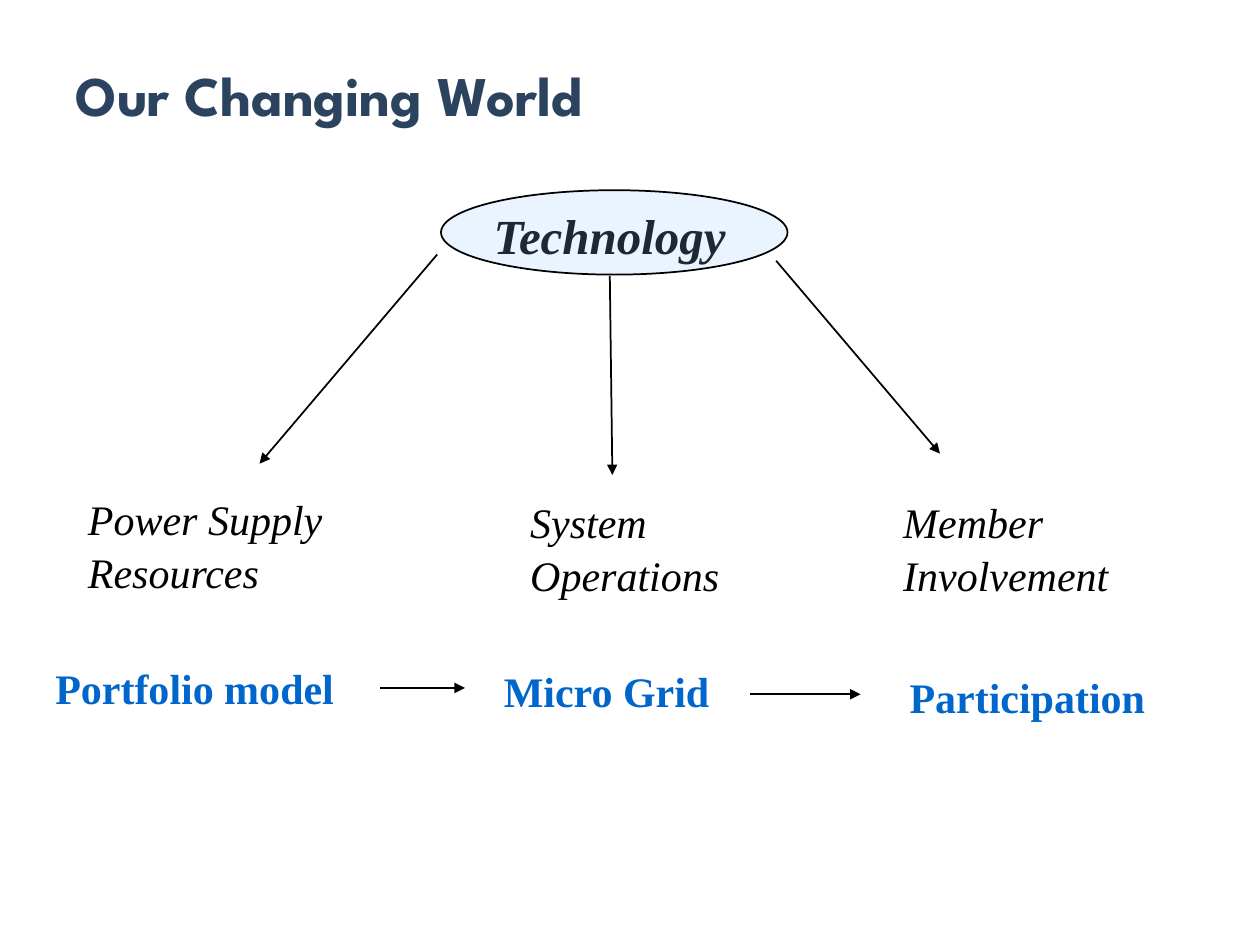
from lxml import etree
from pptx import Presentation
from pptx.dml.color import RGBColor
from pptx.enum.shapes import MSO_CONNECTOR, MSO_SHAPE
from pptx.enum.text import MSO_ANCHOR, PP_ALIGN
from pptx.oxml.ns import qn
from pptx.util import Inches, Pt

STRAIGHT = MSO_CONNECTOR.STRAIGHT
OVAL = MSO_SHAPE.OVAL
MIDDLE = MSO_ANCHOR.MIDDLE
LEFT = PP_ALIGN.LEFT

BLACK = RGBColor(0x00, 0x00, 0x00)
NAVY = RGBColor(0x2C, 0x43, 0x60)
BLUE = RGBColor(0x00, 0x66, 0xCC)
SKY = RGBColor(0x99, 0xCC, 0xFF)

TITLE_FONT = "League Spartan"
BODY_FONT = "Times New Roman"
LINE_SPACING = 1.05

TITLE = "Our Changing World"
TITLE_AREA = (0.5, 0.33, 8.75, 0.83)
HUB = "Technology"
HUB_AREA = (3.82, 1.56, 2.67, 0.57)
HUB_OVAL_AREA = (3.5, 1.51, 2.75, 0.67)

AREAS = [
    ("Power Supply Resources", (0.6, 3.85, 2.17, 0.91)),
    ("System Operations", (4.11, 3.87, 1.79, 0.91)),
    ("Member Involvement", (7.07, 3.87, 1.92, 0.91)),
]
OUTCOMES = [
    ("Portfolio model", (0.34, 5.19, 2.68, 0.51)),
    ("Micro Grid", (3.9, 5.21, 1.95, 0.51)),
    ("Participation", (7.12, 5.26, 2.29, 0.51)),
]
HUB_ARROWS = [
    ((3.47, 2.02), (2.06, 3.68)),
    ((4.84, 2.19), (4.86, 3.77)),
    ((6.16, 2.07), (7.46, 3.6)),
]
OUTCOME_ARROWS = [
    ((3.02, 5.46), (3.69, 5.46)),
    ((5.95, 5.51), (6.83, 5.51)),
]


def inches(lengths):
    return [Inches(length) for length in lengths]


def add_span(para, text, font_name, size, color, bold=False, italic=False):
    span = para.add_run()
    span.text = text
    font = span.font
    font.name, font.size, font.color.rgb = font_name, Pt(size), color
    font.bold, font.italic = bold, italic


def add_title(page):
    title = page.shapes.title
    title.left, title.top, title.width, title.height = inches(TITLE_AREA)
    title.text_frame.vertical_anchor = MIDDLE
    para = title.text_frame.paragraphs[0]
    para.alignment = LEFT
    add_span(para, TITLE, TITLE_FONT, 32, NAVY, bold=True)


def add_label(page, text, area, size, color, bold=False, italic=False):
    box = page.shapes.add_textbox(*inches(area))
    box.text_frame.word_wrap = True
    para = box.text_frame.paragraphs[0]
    para.line_spacing = LINE_SPACING
    add_span(para, text, BODY_FONT, size, color, bold, italic)


def add_arrow(page, start, end):
    arrow = page.shapes.add_connector(STRAIGHT, *inches(start + end))
    arrow.line.color.rgb = BLACK
    arrow.line.width = Pt(1)
    etree.SubElement(arrow.line._get_or_add_ln(), qn("a:tailEnd"), type="triangle")
    etree.SubElement(arrow._element.spPr, qn("a:effectLst"))


def add_hub_oval(page):
    """Add the translucent oval that tints the hub label beneath it."""
    oval = page.shapes.add_shape(OVAL, *inches(HUB_OVAL_AREA))
    oval.shadow.inherit = False
    oval.fill.solid()
    oval.fill.fore_color.rgb = SKY
    color = oval._element.spPr.find(qn("a:solidFill")).find(qn("a:srgbClr"))
    etree.SubElement(color, qn("a:alpha"), val="20000")
    oval.line.color.rgb = BLACK
    oval.line.width = Pt(1)


def main():
    deck = Presentation()
    deck.slide_width, deck.slide_height = Inches(10), Inches(7.5)
    page = deck.slides.add_slide(deck.slide_layouts[5])

    add_title(page)
    add_label(page, HUB, HUB_AREA, 28, BLACK, bold=True, italic=True)
    for text, area in AREAS:
        add_label(page, text, area, 24, BLACK, italic=True)
    for start, end in HUB_ARROWS:
        add_arrow(page, start, end)
    add_hub_oval(page)
    for text, area in OUTCOMES:
        add_label(page, text, area, 24, BLUE, bold=True)
    for start, end in OUTCOME_ARROWS:
        add_arrow(page, start, end)

    deck.save("out.pptx")


if __name__ == "__main__":
    main()
